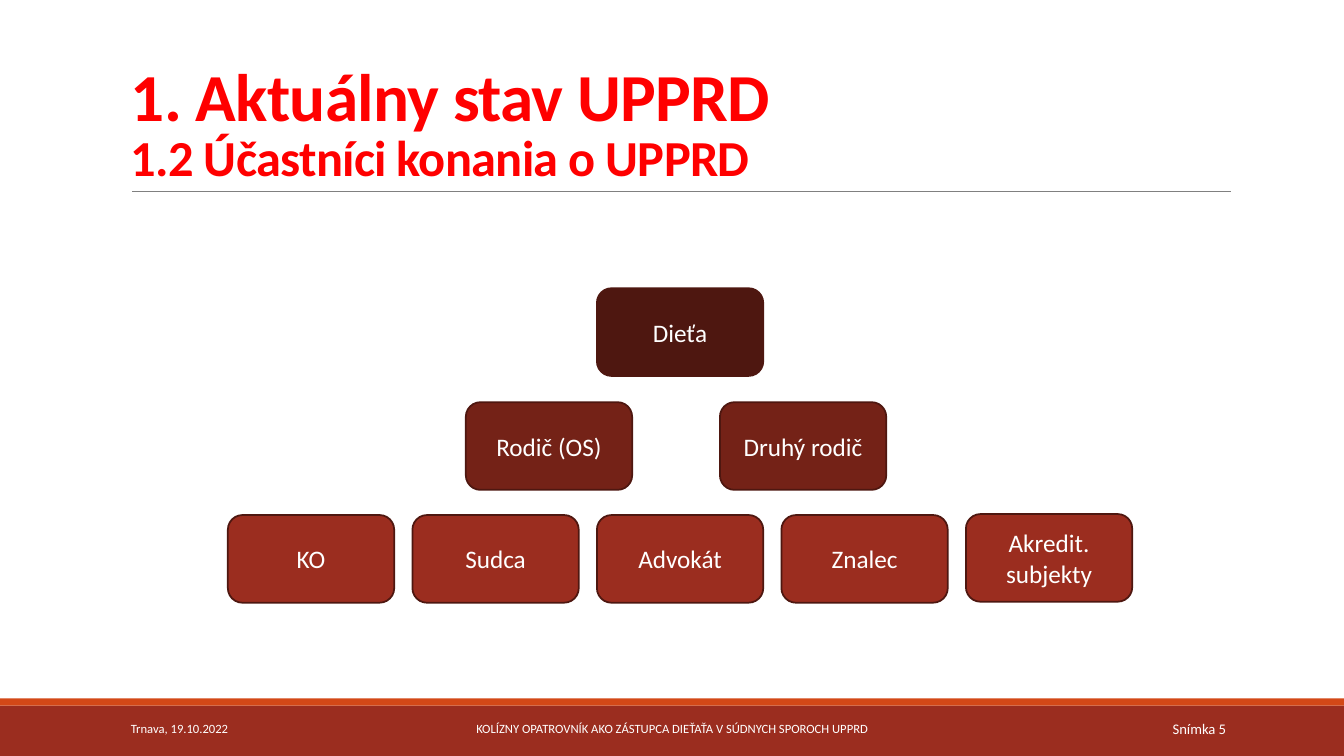
"""Build the slide on the participants in the proceedings."""
from dataclasses import dataclass
from typing import Any

from lxml import etree
from pptx import Presentation
from pptx.dml.color import RGBColor
from pptx.enum import shapes, text
from pptx.oxml import ns
from pptx.slide import Slide
from pptx.util import Pt

PX = 9144
SLIDE_WIDTH, SLIDE_HEIGHT = 1333, 750
BOX_WIDTH, BOX_HEIGHT = 165, 87

WHITE = RGBColor(0xFF, 0xFF, 0xFF)
RED = RGBColor(0xFF, 0x00, 0x00)
ORANGE = RGBColor(0xD3, 0x48, 0x17)
BRICK = RGBColor(0x9B, 0x2D, 0x1F)
MAROON = RGBColor(0x74, 0x22, 0x17)
DARK_MAROON = RGBColor(0x4E, 0x17, 0x10)
GRAY = RGBColor(0x80, 0x80, 0x80)


@dataclass(frozen=True)
class Area:
    """A rectangle on the slide in px."""

    left: int
    top: int
    width: int
    height: int

    def emu(self) -> tuple[int, int, int, int]:
        """Return the rectangle in EMU."""
        return self.left * PX, self.top * PX, self.width * PX, self.height * PX


@dataclass(frozen=True)
class Band:
    """A plain coloured strip."""

    area: Area
    color: RGBColor


@dataclass(frozen=True)
class BoxRow:
    """Equally spaced participant boxes of one colour."""

    left: int
    top: int
    pitch: int
    color: RGBColor
    labels: tuple[str, ...]


@dataclass(frozen=True)
class Label:
    """A line of footer text."""

    area: Area
    wording: str
    size: float
    align: text.PP_ALIGN


BANDS = (
    Band(Area(0, 700, SLIDE_WIDTH, 50), BRICK),
    Band(Area(0, 693, SLIDE_WIDTH, 7), ORANGE),
)
ROWS = (
    BoxRow(592, 286, 0, DARK_MAROON, ("Dieťa",)),
    BoxRow(462, 399, 252, MAROON, ("Rodič (OS)", "Druhý rodič")),
    BoxRow(226, 511, 183, BRICK, ("KO", "Sudca", "Advokát", "Znalec")),
    BoxRow(958, 510, 0, BRICK, ("Akredit. subjekty",)),
)
FOOTER = (
    Label(Area(120, 703, 270, 40), "Trnava, 19.10.2022", 9, text.PP_ALIGN.LEFT),
    Label(
        Area(403, 703, 527, 40),
        "KOLÍZNY OPATROVNÍK AKO ZÁSTUPCA DIEŤAŤA V SÚDNYCH SPOROCH UPPRD",
        9,
        text.PP_ALIGN.CENTER,
    ),
    Label(Area(1083, 703, 143, 40), "Snímka 5", 10.5, text.PP_ALIGN.RIGHT),
)
TITLE_AREA = Area(120, 31, 1100, 159)
TITLE_LINES = (("1. Aktuálny stav UPPRD", 48), ("1.2 Účastníci konania o UPPRD", 36))


def apply(target: Any, values: dict[str, Any]) -> None:
    """Set each named attribute on the target."""
    for name, value in values.items():
        setattr(target, name, value)


def add_run(paragraph: Any, wording: str, size: float, color: RGBColor, bold: bool = False) -> Any:
    """Append a formatted run to the paragraph."""
    run = paragraph.add_run()
    run.text = wording
    apply(run.font, {"name": "Calibri", "size": Pt(size), "bold": bold})
    run.font.color.rgb = color
    return run


def write(shape: Any, wording: str, size: float, align: text.PP_ALIGN) -> None:
    """Fill a shape with one white, vertically centred paragraph."""
    apply(shape.text_frame, {"word_wrap": True, "vertical_anchor": text.MSO_ANCHOR.MIDDLE})
    paragraph = shape.text_frame.paragraphs[0]
    paragraph.alignment = align
    add_run(paragraph, wording, size, WHITE)


def add_filled(slide: Slide, kind: shapes.MSO_SHAPE, area: Area, color: RGBColor) -> Any:
    """Add a flat shape of one colour."""
    shape = slide.shapes.add_shape(kind, *area.emu())
    shape.shadow.inherit = False
    shape.fill.solid()
    shape.fill.fore_color.rgb = color
    return shape


def add_band(slide: Slide, band: Band) -> None:
    """Add a strip without an outline."""
    shape = add_filled(slide, shapes.MSO_SHAPE.RECTANGLE, band.area, band.color)
    shape.line.fill.background()


def add_row(slide: Slide, row: BoxRow) -> None:
    """Add one row of participant boxes."""
    for index, wording in enumerate(row.labels):
        area = Area(row.left + index * row.pitch, row.top, BOX_WIDTH, BOX_HEIGHT)
        box = add_filled(slide, shapes.MSO_SHAPE.ROUNDED_RECTANGLE, area, row.color)
        box.line.color.rgb = DARK_MAROON
        box.line.width = Pt(1.25)
        write(box, wording, 18, text.PP_ALIGN.CENTER)


def add_label(slide: Slide, label: Label) -> None:
    """Add one footer label."""
    write(slide.shapes.add_textbox(*label.area.emu()), label.wording, label.size, label.align)


def add_title(slide: Slide) -> None:
    """Add the two-line title and the rule under it."""
    frame = slide.shapes.add_textbox(*TITLE_AREA.emu()).text_frame
    apply(frame, {"word_wrap": True, "vertical_anchor": text.MSO_ANCHOR.BOTTOM})
    paragraph = frame.paragraphs[0]
    paragraph.line_spacing = 0.85
    for index, (wording, size) in enumerate(TITLE_LINES):
        if index:
            paragraph.add_line_break()
        run = add_run(paragraph, wording, size, RED, bold=True)
        run.font._element.set("spc", "-50")
    rule = slide.shapes.add_connector(
        shapes.MSO_CONNECTOR.STRAIGHT, 131 * PX, 190 * PX, 1221 * PX, 190 * PX
    )
    rule.line.color.rgb = GRAY
    rule.line.width = Pt(0.5)
    etree.SubElement(rule._element.spPr, ns.qn("a:effectLst"))


def main() -> None:
    """Build and save the presentation."""
    presentation = Presentation()
    apply(presentation, {"slide_width": SLIDE_WIDTH * PX, "slide_height": SLIDE_HEIGHT * PX})
    slide = presentation.slides.add_slide(presentation.slide_layouts[6])
    for band in BANDS:
        add_band(slide, band)
    add_title(slide)
    for row in ROWS:
        add_row(slide, row)
    for label in FOOTER:
        add_label(slide, label)
    presentation.save("out.pptx")


if __name__ == "__main__":
    main()
